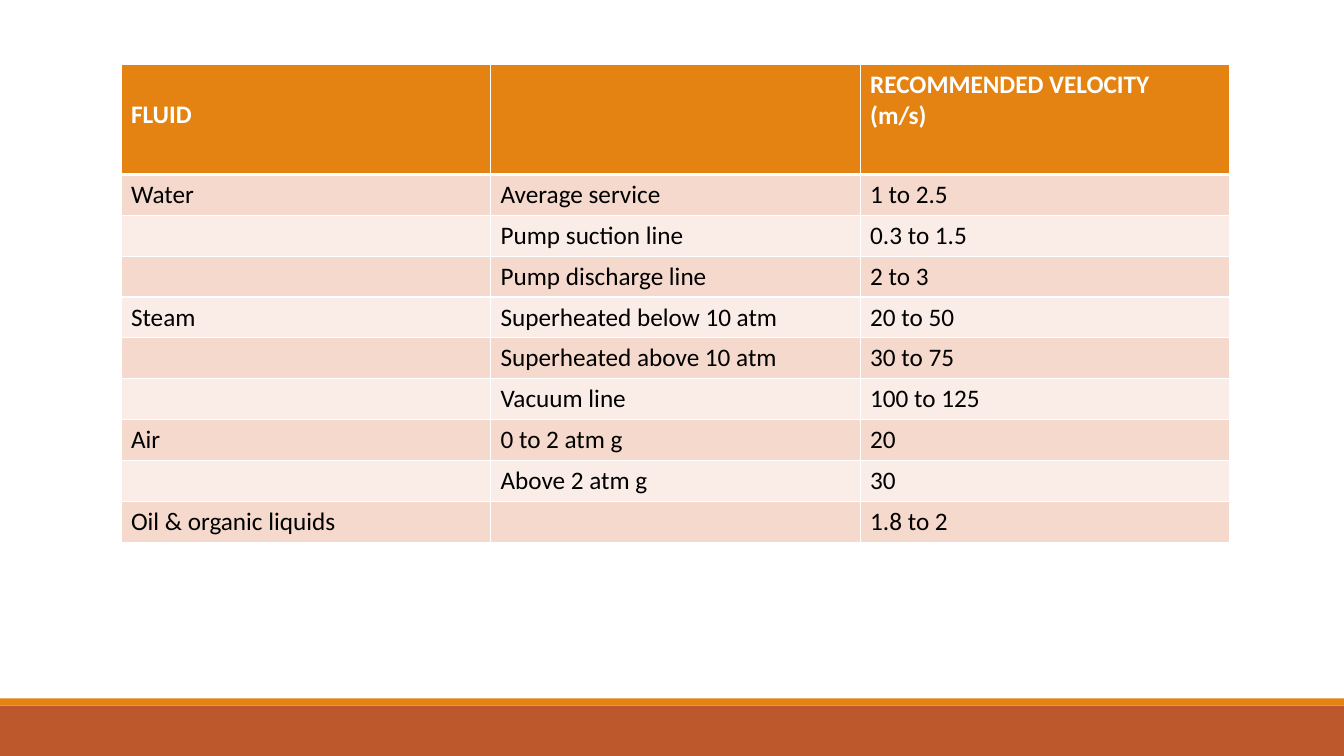
from lxml import etree
from pptx import Presentation
from pptx.dml.color import RGBColor
from pptx.enum.shapes import MSO_SHAPE
from pptx.oxml.ns import qn
from pptx.util import Inches, Pt

RECTANGLE = MSO_SHAPE.RECTANGLE

ORANGE = RGBColor(0xE4, 0x83, 0x12)
RUST = RGBColor(0xBD, 0x58, 0x2C)
DARK_BAND = RGBColor(0xF5, 0xD9, 0xCC)
LIGHT_BAND = RGBColor(0xFA, 0xED, 0xE7)
WHITE = RGBColor(0xFF, 0xFF, 0xFF)
BLACK = RGBColor(0x00, 0x00, 0x00)

GRID_COLUMNS = 40
GRID_ROWS = 75

HEADER = ("FLUID", "", "RECOMMENDED VELOCITY\n(m/s)")
VELOCITIES = (
    ("Water", "Average service", "1 to 2.5"),
    ("", "Pump suction line", "0.3 to 1.5"),
    ("", "Pump discharge line", "2 to 3"),
    ("Steam", "Superheated below 10 atm", "20 to 50"),
    ("", "Superheated above 10 atm", "30 to 75"),
    ("", "Vacuum line", "100 to 125"),
    ("Air", "0 to 2 atm g", "20"),
    ("", "Above 2 atm g", "30"),
    ("Oil & organic liquids", "", "1.8 to 2"),
)


class SlideBuilder:
    """Draws on one slide, with lengths in grid columns and rows."""

    font_name = "Calibri"
    font_size = Pt(18)
    thin_border = Pt(1)
    thick_border = Pt(3)

    def __init__(self, presentation):
        self.column = presentation.slide_width / GRID_COLUMNS
        self.row = presentation.slide_height / GRID_ROWS
        self.slide = presentation.slides.add_slide(presentation.slide_layouts[6])

    def box(self, left, top, width, height):
        return (round(left * self.column), round(top * self.row),
                round(width * self.column), round(height * self.row))

    def bar(self, top, height, color):
        """Add a bar across the whole slide."""
        shape = self.slide.shapes.add_shape(
            RECTANGLE, *self.box(0, top, GRID_COLUMNS, height))
        shape.shadow.inherit = False
        shape.fill.solid()
        shape.fill.fore_color.rgb = color
        shape.line.fill.background()

    def table(self, left, top, width, height, header_height, header, body):
        frame = self.slide.shapes.add_table(
            len(body) + 1, len(header), *self.box(left, top, width, height))
        table = frame.table
        body_height = (height - header_height) / len(body)
        for row_index, texts in enumerate((header, *body)):
            is_header = row_index == 0
            row_height = header_height if is_header else body_height
            table.rows[row_index].height = round(row_height * self.row)
            if is_header:
                fill = ORANGE
            else:
                fill = DARK_BAND if row_index % 2 else LIGHT_BAND
            for column_index, text in enumerate(texts):
                cell = table.cell(row_index, column_index)
                self.borders(cell, row_index)
                cell.fill.solid()
                cell.fill.fore_color.rgb = fill
                self.cell_text(cell, text, is_header)
        return table

    def borders(self, cell, row_index):
        """Set white borders, thick between the header and the body."""
        top = self.thick_border if row_index == 1 else self.thin_border
        bottom = self.thick_border if row_index == 0 else self.thin_border
        properties = cell._tc.get_or_add_tcPr()
        for side, width in (("L", self.thin_border), ("R", self.thin_border),
                            ("T", top), ("B", bottom)):
            line = etree.SubElement(properties, qn(f"a:ln{side}"), w=str(width))
            solid = etree.SubElement(line, qn("a:solidFill"))
            etree.SubElement(solid, qn("a:srgbClr"), val=str(WHITE))

    def cell_text(self, cell, text, is_header):
        cell.text = text
        for paragraph in cell.text_frame.paragraphs:
            font = paragraph.font
            font.name = self.font_name
            font.size = self.font_size
            font.bold = is_header
            font.color.rgb = WHITE if is_header else BLACK


def main():
    presentation = Presentation()
    presentation.slide_width = Inches(13.33)
    presentation.slide_height = Inches(7.5)

    builder = SlideBuilder(presentation)
    builder.bar(70, 5, RUST)
    builder.bar(69.3, 0.7, ORANGE)
    velocity_table = builder.table(3.6, 6.4, 33, 47.4, 10.9, HEADER, VELOCITIES)
    # Level FLUID with the second line of the velocity heading
    velocity_table.cell(0, 0).margin_top = Inches(0.35)

    presentation.save("out.pptx")


if __name__ == "__main__":
    main()
